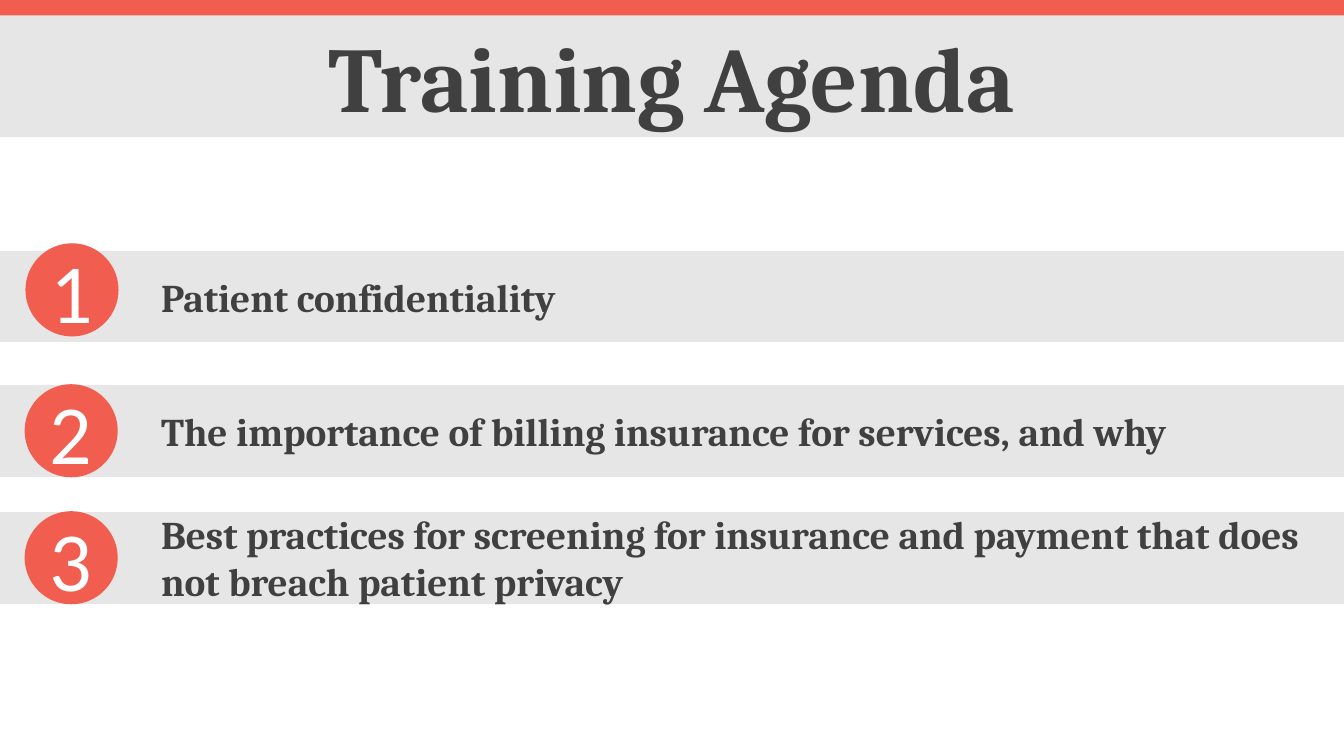
from dataclasses import dataclass

from pptx import Presentation
from pptx.dml.color import RGBColor
from pptx.enum.shapes import MSO_SHAPE as Shape
from pptx.enum.text import MSO_ANCHOR as Anchor, MSO_AUTO_SIZE as AutoSize, PP_ALIGN as Align
from pptx.util import Cm, Pt


@dataclass(frozen=True)
class Theme:
    accent: RGBColor = RGBColor(0xF1, 0x5D, 0x4F)
    band: RGBColor = RGBColor(0xE7, 0xE6, 0xE6)
    ink: RGBColor = RGBColor(0x40, 0x40, 0x40)
    white: RGBColor = RGBColor(0xFF, 0xFF, 0xFF)
    heading_font: str = "Cambria"
    number_font: str = "Calibri"
    title_size: int = 66
    item_size: int = 28
    number_size: int = 60


WIDTH = 33.87
ROW_HEIGHT = 2.31

# Agenda text, band top, badge left and badge top, in centimetres
AGENDA = [
    ("Patient confidentiality", 6.32, 0.66, 6.15),
    ("The importance of billing insurance for services, and why", 9.7, 0.64, 9.7),
    ("Best practices for screening for insurance and payment "
     "that does not breach patient privacy", 12.9, 0.64, 12.9),
]


class AgendaSlide:
    def __init__(self, page, theme):
        self.page = page
        self.theme = theme

    def block(self, kind, left, top, width, height, color):
        box = self.page.shapes.add_shape(kind, Cm(left), Cm(top), Cm(width), Cm(height))
        box.shadow.inherit = False
        box.fill.solid()
        box.fill.fore_color.rgb = color
        box.line.fill.background()
        return box

    def label(self, box, text, font_name, size, color, bold, align, anchor):
        frame = box.text_frame
        frame.word_wrap = True
        frame.vertical_anchor = anchor
        para = frame.paragraphs[0]
        para.text = text
        para.alignment = align
        para.font.name = font_name
        para.font.size = Pt(size)
        para.font.bold = bold
        para.font.color.rgb = color

    def title(self, text):
        theme = self.theme
        self.block(Shape.RECTANGLE, 0, 0, WIDTH, 2.18, theme.accent)
        box = self.block(Shape.RECTANGLE, 0, 0.39, WIDTH, 3.07, theme.band)
        self.label(box, text, theme.heading_font, theme.title_size, theme.ink,
                   True, Align.CENTER, Anchor.TOP)
        box.text_frame.auto_size = AutoSize.SHAPE_TO_FIT_TEXT

    def item(self, text, top):
        theme = self.theme
        box = self.block(Shape.FLOWCHART_PROCESS, 0, top, WIDTH, ROW_HEIGHT, theme.band)
        self.label(box, text, theme.heading_font, theme.item_size, theme.ink,
                   True, Align.LEFT, Anchor.MIDDLE)
        frame = box.text_frame
        frame.margin_left = Cm(4.06)
        frame.margin_top = frame.margin_right = frame.margin_bottom = Cm(0.13)

    def badge(self, number, left, top):
        theme = self.theme
        box = self.block(Shape.FLOWCHART_CONNECTOR, left, top, ROW_HEIGHT, ROW_HEIGHT,
                         theme.accent)
        box.line.color.rgb = theme.accent
        box.line.width = Pt(1)
        self.label(box, str(number), theme.number_font, theme.number_size, theme.white,
                   False, Align.CENTER, Anchor.MIDDLE)


def main():
    deck = Presentation()
    deck.slide_width, deck.slide_height = Cm(WIDTH), Cm(19.05)
    slide = AgendaSlide(deck.slides.add_slide(deck.slide_layouts[6]), Theme())

    # Heading with accent strip
    slide.title("Training Agenda")

    # Numbered agenda rows
    for number, (text, band_top, badge_left, badge_top) in enumerate(AGENDA, start=1):
        slide.item(text, band_top)
        slide.badge(number, badge_left, badge_top)

    deck.save("out.pptx")


if __name__ == "__main__":
    main()
